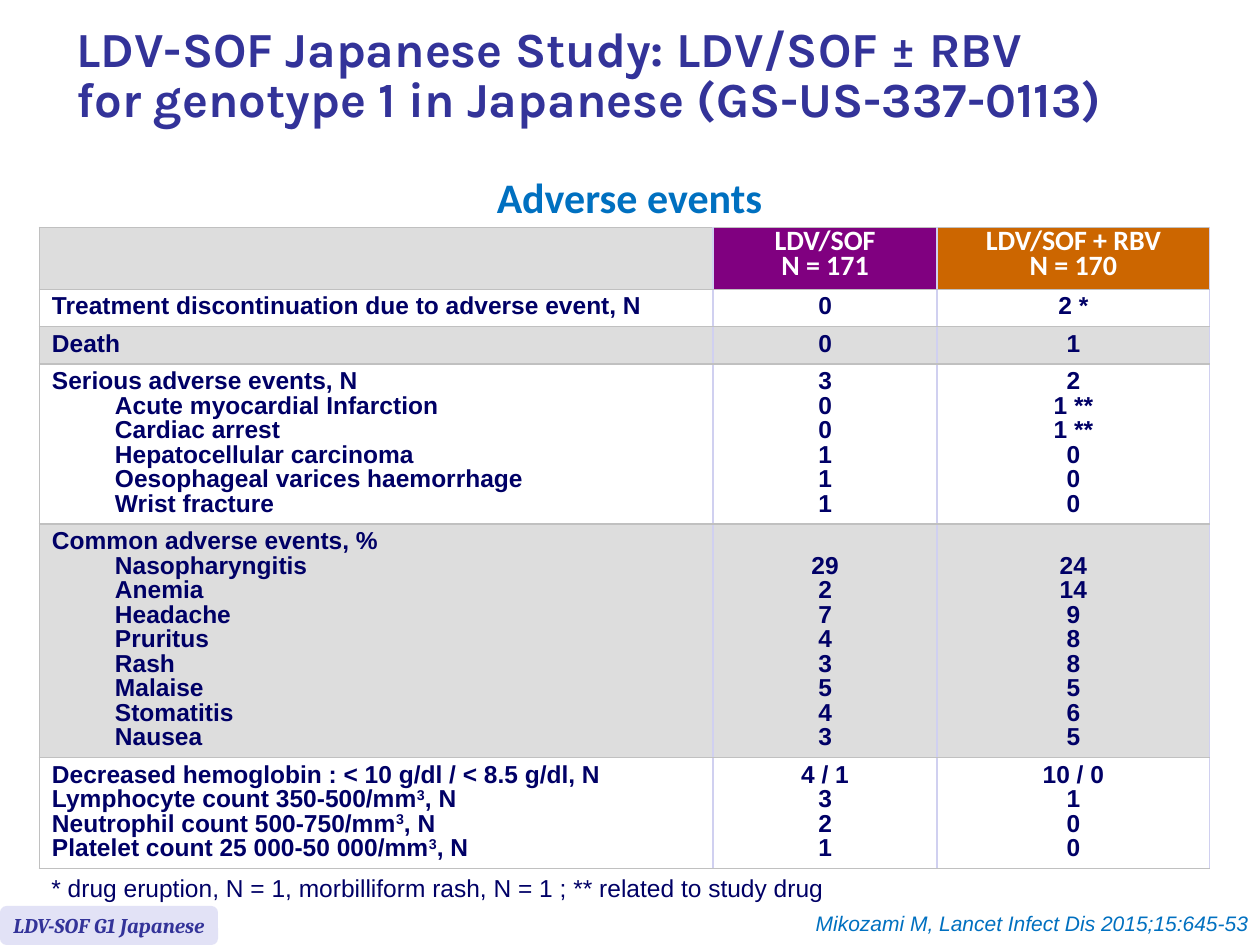
from lxml import etree
from pptx import Presentation
from pptx.dml.color import RGBColor
from pptx.enum.shapes import MSO_SHAPE as Shape
from pptx.enum.text import MSO_ANCHOR as Anchor, MSO_AUTO_SIZE as AutoSize, PP_ALIGN as Align
from pptx.oxml.ns import qn
from pptx.util import Pt

COLORS = {
    "navy": "000066", "title": "333399", "blue": "0070C0", "white": "FFFFFF",
    "gray": "DDDDDD", "purple": "800080", "orange": "CC6600",
    "tag": "E2E2F6", "row_line": "C0C0C0", "column_line": "D0D0F0",
}

HEADER = [[], ["LDV/SOF", "N = 171"], ["LDV/SOF + RBV", "N = 170"]]
HEADER_FILLS = ["gray", "purple", "orange"]
BODY = [
    (["Treatment discontinuation due to adverse event, N"], ["0"], ["2 *"]),
    (["Death"], ["0"], ["1"]),
    (["Serious adverse events, N", "\tAcute myocardial Infarction", "\tCardiac arrest",
      "\tHepatocellular carcinoma", "\tOesophageal varices haemorrhage", "\tWrist fracture"],
     ["3", "0", "0", "1", "1", "1"],
     ["2", "1 **", "1 **", "0", "0", "0"]),
    (["Common adverse events, %", "\tNasopharyngitis", "\tAnemia", "\tHeadache", "\tPruritus",
      "\tRash", "\tMalaise", "\tStomatitis", "\tNausea"],
     ["29", "2", "7", "4", "3", "5", "4", "3"],
     ["24", "14", "9", "8", "8", "5", "6", "5"]),
    (["Decreased hemoglobin : < 10 g/dl / < 8.5 g/dl, N", "Lymphocyte count 350-500/mm^3^, N",
      "Neutrophil count 500-750/mm^3^, N", "Platelet count 25 000-50 000/mm^3^, N"],
     ["4 / 1", "3", "2", "1"],
     ["10 / 0", "1", "0", "0"]),
]
BODY_FILLS = ["white", "gray", "white", "gray", "white"]
COLUMN_WIDTHS = [385, 128, 155.8]
TABLE_LEFT, TABLE_TOP = 22.5, 129.9
LINE_HEIGHT, CELL_PADDING = 14, 7.4

TITLE = ["LDV-SOF Japanese Study: LDV/SOF ± RBV", "for genotype 1 in Japanese (GS-US-337-0113)"]
NOTES = [
    ("Adverse events", (275.8, 94.3, 167.8, 36), Align.CENTER, ("Calibri", 24, "blue", True, False)),
    ("* drug eruption, N = 1, morbilliform rash, N = 1 ; ** related to study drug",
     (22.3, 495.4, 465.8, 24.2), Align.LEFT, ("Arial", 14, "navy", False, False)),
    ("Mikozami M, Lancet Infect Dis 2015;15:645-53",
     (454.3, 517, 266.4, 21.8), Align.RIGHT, ("Arial", 12, "blue", False, True)),
]


def color(name):
    return RGBColor.from_string(COLORS[name])


def add_run(paragraph, text, style):
    run = paragraph.add_run()
    run.text = text
    font = run.font
    font.name, size, ink, font.bold, font.italic = style
    font.size = Pt(size)
    font.color.rgb = color(ink)
    return run


def add_text_box(slide, place):
    box = slide.shapes.add_textbox(*map(Pt, place))
    return box.text_frame


def set_borders(cell, names):
    properties = cell._tc.get_or_add_tcPr()
    for index, (side, name) in enumerate(zip("LRTB", names)):
        line = etree.Element(qn(f"a:ln{side}"), w=str(Pt(1)))
        fill = etree.SubElement(line, qn("a:solidFill"))
        etree.SubElement(fill, qn("a:srgbClr"), val=COLORS[name])
        properties.insert(index, line)


def fill_cell(cell, lines, style, align):
    frame = cell.text_frame
    for index, line in enumerate(lines):
        paragraph = frame.add_paragraph() if index else frame.paragraphs[0]
        paragraph.alignment = align
        paragraph.line_spacing = Pt(LINE_HEIGHT)
        if line.startswith("\t"):
            paragraph.level = 1
            properties = paragraph._p.get_or_add_pPr()
            properties.set("marL", str(Pt(36)))
            properties.set("indent", "0")
        for part, text in enumerate(line.strip().split("^")):
            run = add_run(paragraph, text, style)
            if part % 2:
                run._r.get_or_add_rPr().set("baseline", "30000")


def add_events_table(slide):
    rows = [HEADER, *BODY]
    fills = [HEADER_FILLS] + [[name] * 3 for name in BODY_FILLS]
    counts = [max(map(len, row)) for row in rows]
    heights = [count * LINE_HEIGHT + CELL_PADDING for count in counts]
    frame = slide.shapes.add_table(len(rows), len(COLUMN_WIDTHS), Pt(TABLE_LEFT), Pt(TABLE_TOP),
                                   Pt(sum(COLUMN_WIDTHS)), Pt(sum(heights)))
    table = frame.table
    table.first_row = table.horz_banding = False
    for column, width in zip(table.columns, COLUMN_WIDTHS):
        column.width = Pt(width)
    for r, row in enumerate(rows):
        table.rows[r].height = Pt(heights[r])
        style = ("Arial", 14, "navy", True, False) if r else ("Calibri", 16, "white", True, False)
        for c, lines in enumerate(row):
            cell = table.cell(r, c)
            cell.fill.solid()
            cell.fill.fore_color.rgb = color(fills[r][c])
            left = "column_line" if c else "row_line"
            set_borders(cell, (left, "column_line", "row_line", "row_line"))
            cell.vertical_anchor = Anchor.BOTTOM if 0 < len(lines) < counts[r] else Anchor.MIDDLE
            fill_cell(cell, lines, style, Align.CENTER if c else Align.LEFT)


def add_title(slide):
    frame = add_text_box(slide, (36.7, 5.8, 657.4, 77))
    frame.word_wrap = True
    frame.vertical_anchor = Anchor.MIDDLE
    paragraph = frame.paragraphs[0]
    paragraph.line_spacing = 0.85
    for index, line in enumerate(TITLE):
        if index:
            paragraph.add_line_break()
        add_run(paragraph, line, ("Karla", 28, "title", True, False))


def add_tag(slide):
    tag = slide.shapes.add_shape(Shape.ROUNDED_RECTANGLE, 0, Pt(517.7), Pt(124.6), Pt(22.3))
    tag.shadow.inherit = False
    tag.fill.solid()
    tag.fill.fore_color.rgb = color("tag")
    tag.line.fill.background()
    frame = tag.text_frame
    frame.word_wrap = False
    frame.vertical_anchor = Anchor.MIDDLE
    paragraph = frame.paragraphs[0]
    paragraph.alignment = Align.CENTER
    add_run(paragraph, "LDV-SOF G1 Japanese", ("Cambria", 12, "title", True, True))


def add_note(slide, text, place, align, style):
    frame = add_text_box(slide, place)
    frame.word_wrap = False
    frame.auto_size = AutoSize.SHAPE_TO_FIT_TEXT
    paragraph = frame.paragraphs[0]
    paragraph.alignment = align
    add_run(paragraph, text, style)


def main():
    presentation = Presentation()
    presentation.slide_width, presentation.slide_height = Pt(720), Pt(540)
    slide = presentation.slides.add_slide(presentation.slide_layouts[6])
    add_events_table(slide)
    add_title(slide)
    add_tag(slide)
    for note in NOTES:
        add_note(slide, *note)
    presentation.save("out.pptx")


if __name__ == "__main__":
    main()
